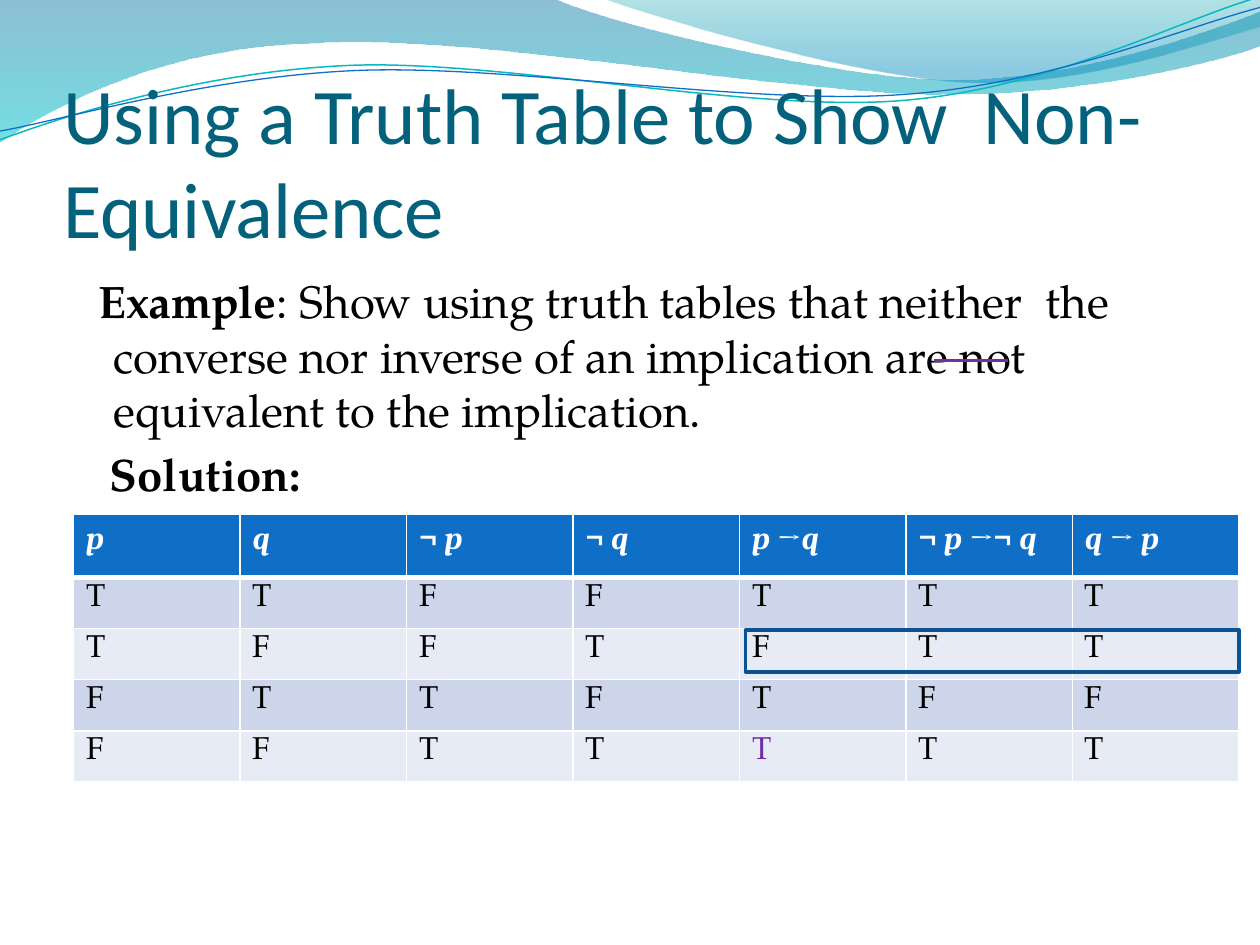
from itertools import chain, groupby
from math import cos, radians, sin

from lxml.etree import SubElement
from pptx import Presentation
from pptx.dml.color import RGBColor
from pptx.enum.shapes import MSO_CONNECTOR, MSO_SHAPE
from pptx.enum.text import MSO_ANCHOR, MSO_AUTO_SIZE, PP_ALIGN
from pptx.oxml.ns import qn
from pptx.util import Pt


def color(value):
    return RGBColor.from_string(value)


def turn(point, center, degrees):
    angle = radians(degrees)
    across, down = point[0] - center[0], point[1] - center[1]
    return (center[0] + across * cos(angle) - down * sin(angle),
            center[1] + across * sin(angle) + down * cos(angle))


class SlideBuilder:
    heading_font = "Calibri"
    body_font = "TeX Gyre Pagella"
    symbol_font = "Cambria"
    teal = "04617B"
    blue = "0F6FC6"
    navy = "0B5292"
    purple = "7030A0"
    bands = ("CCD5EA", "E7EBF5")
    tilt = 2.7

    def __init__(self, deck):
        self.slide = deck.slides.add_slide(deck.slide_layouts[1])
        self.shapes = self.slide.shapes

    def format_span(self, span, font, size, fill, bold=False, italic=False):
        span.font.name = font
        span.font.size = Pt(size)
        span.font.color.rgb = color(fill)
        span.font.bold = bold
        span.font.italic = italic

    def outline(self, start, segments, closed):
        builder = self.shapes.build_freeform(Pt(start[0]), Pt(start[1]))
        builder.add_line_segments(
            [(Pt(x), Pt(y)) for x, y in chain.from_iterable(segments)], close=closed
        )
        shape = builder.convert_to_shape()
        shape.shadow.inherit = False
        lines = iter(list(shape.element.iter(qn("a:lnTo"))))
        for segment in segments:
            group = [next(lines) for _ in segment]
            if len(group) == 3:
                group[0].tag = qn("a:cubicBezTo")
                for line in group[1:]:
                    group[0].append(line[0])
                    line.getparent().remove(line)
        return shape

    def wave(self, start, segments, stops):
        shape = self.outline(start, segments, True)
        shape.line.fill.background()
        shape.fill.gradient()
        shape.fill.gradient_angle = 270
        for stop, (position, fill, alpha) in zip(shape.fill.gradient_stops, stops):
            stop.position = position
            stop.color.rgb = color(fill)
        for element, (position, fill, alpha) in zip(shape.element.iter(qn("a:srgbClr")), stops):
            SubElement(element, qn("a:alpha"), val=str(alpha * 1000))

    def ripple(self, center, start, segments, stroke, width):
        level = [[turn(point, center, self.tilt) for point in segment] for segment in segments]
        shape = self.outline(turn(start, center, self.tilt), level, False)
        shape.rotation = 360 - self.tilt
        shape.fill.background()
        shape.line.color.rgb = color(stroke)
        shape.line.width = Pt(width)

    def place(self, box, left, top, width, height):
        self.shapes.element.append(box.element)
        box.left, box.top, box.width, box.height = Pt(left), Pt(top), Pt(width), Pt(height)
        box.text_frame.word_wrap = True
        box.text_frame.auto_size = MSO_AUTO_SIZE.NONE
        return box.text_frame

    def title(self, text, *bounds):
        frame = self.place(self.shapes.title, *bounds)
        frame.margin_left = frame.margin_right = frame.margin_bottom = 0
        frame.vertical_anchor = MSO_ANCHOR.BOTTOM
        frame.text = text
        para = frame.paragraphs[0]
        para.alignment = PP_ALIGN.LEFT
        self.format_span(para.runs[0], self.heading_font, 45, self.teal)

    def body(self, paragraphs, *bounds):
        frame = self.place(self.slide.placeholders[1], *bounds)
        frame.text = "\n".join("" for _ in paragraphs)
        for para, (indent, spans) in zip(frame.paragraphs, paragraphs):
            para.space_before = Pt(5.2)
            properties = para._p.get_or_add_pPr()
            properties.set("marL", str(Pt(21.6)))
            properties.set("indent", str(Pt(indent)))
            SubElement(properties, qn("a:buNone"))
            for text, bold in spans:
                span = para.add_run()
                span.text = text
                self.format_span(span, self.body_font, 26, "000000", bold)

    def truth_table(self, headers, rows, left, top, width, heights, accent):
        frame = self.shapes.add_table(
            len(rows) + 1, len(headers), Pt(left), Pt(top), Pt(width), Pt(sum(heights))
        )
        table = frame.table
        for column in table.columns:
            column.width = Pt(width / len(headers))
        for row, height in zip(table.rows, heights):
            row.height = Pt(height)
        for index, text in enumerate(headers):
            cell = table.cell(0, index)
            self.underline(cell, 3)
            self.fill_cell(cell, self.blue)
            for italic, letters in groupby(text, str.isalpha):
                span = cell.text_frame.paragraphs[0].add_run()
                span.text = "".join(letters)
                self.format_span(span, self.symbol_font, 18, "FFFFFF", True, italic)
        for number, values in enumerate(rows, 1):
            for index, value in enumerate(values):
                cell = table.cell(number, index)
                self.fill_cell(cell, self.bands[(number - 1) % 2])
                cell.text_frame.text = value
                ink = self.purple if (number, index) == accent else "000000"
                self.format_span(cell.text_frame.paragraphs[0].runs[0], self.body_font, 18, ink)

    def underline(self, cell, width):
        properties = cell._tc.get_or_add_tcPr()
        border = SubElement(properties, qn("a:lnB"), w=str(Pt(width)))
        SubElement(SubElement(border, qn("a:solidFill")), qn("a:srgbClr"), val="FFFFFF")

    def fill_cell(self, cell, fill):
        cell.fill.solid()
        cell.fill.fore_color.rgb = color(fill)

    def highlight(self, left, top, width, height):
        box = self.shapes.add_shape(MSO_SHAPE.RECTANGLE, Pt(left), Pt(top), Pt(width), Pt(height))
        box.shadow.inherit = False
        box.fill.background()
        box.line.color.rgb = color(self.navy)
        box.line.width = Pt(2)

    def strike(self, left, right, y):
        line = self.shapes.add_connector(MSO_CONNECTOR.STRAIGHT, Pt(left), Pt(y), Pt(right), Pt(y))
        line.line.color.rgb = color(self.purple)
        line.line.width = Pt(1.75)
        SubElement(line.element.spPr, qn("a:effectLst"))


def main():
    deck = Presentation()
    deck.slide_width, deck.slide_height = Pt(720), Pt(540)
    page = SlideBuilder(deck)

    page.wave((0, 0), [
        [(316.8, -0.7)],
        [(342.7, 12.2), (478.1, 45.4), (545.8, 45.4)],
        [(614.2, 45.4), (689.8, 18.7), (720, 6.5)],
        [(720.7, 25.9)],
        [(707.8, 31.7), (626.4, 54.7), (537.1, 54)],
        [(447.8, 54), (275, 20.2), (185, 24.5)],
        [(92.9, 25.9), (33.1, 59.8), (-0.7, 81.4)],
    ], [(0, "0074A1", 45), (1, "00C6CF", 55)])
    page.wave((344.9, -0.7), [
        [(366.5, 7.9), (491, 44.6), (553.7, 46.8)],
        [(616.3, 49.7), (691.9, 23), (720, 15.1)],
        [(720, 0)],
    ], [(0, "00A1A9", 30), (0.8, "008BBF", 45)])
    page.ripple((359.3, 41.4), (0, 79.9), [
        [(34.6, 67), (113.8, 41), (199.4, 37.4)],
        [(284.4, 33.8), (427, 64.1), (513.4, 57.6)],
        [(599.8, 51.1), (675.4, 10.8), (718.6, -1.4)],
    ], "0AB8BF", 0.85)
    page.ripple((359.6, 42.5), (0, 74.9), [
        [(33.8, 69.1), (118.1, 43.9), (203.8, 40.3)],
        [(290.2, 36.7), (429.8, 60.5), (516.2, 54)],
        [(601.9, 48.2), (677.5, 15.1), (720, 4.3)],
    ], page.blue, 0.75)

    page.title("Using a Truth Table to Show  Non-Equivalence", 36, 55.4, 648, 90)
    page.body([
        (-8.6, [("Example", True),
                (": Show using truth tables that neither  the converse nor inverse of "
                 "an implication are not equivalent to the implication.", False)]),
        (-2, [("Solution:", True)]),
    ], 36, 152.4, 648, 345.6)
    page.truth_table(
        ["p", "q", "¬ p", "¬ q", "p →q", "¬ p →¬ q", "q → p"],
        ["TTFFTTT", "TFFTFTT", "FTTFTFF", "FFTTTTT"],
        42, 294, 666, [36] + [29.2] * 4, accent=(4, 4),
    )
    page.highlight(426, 360, 282, 24)
    page.strike(534, 576, 205.9)
    deck.save("out.pptx")


if __name__ == "__main__":
    main()
